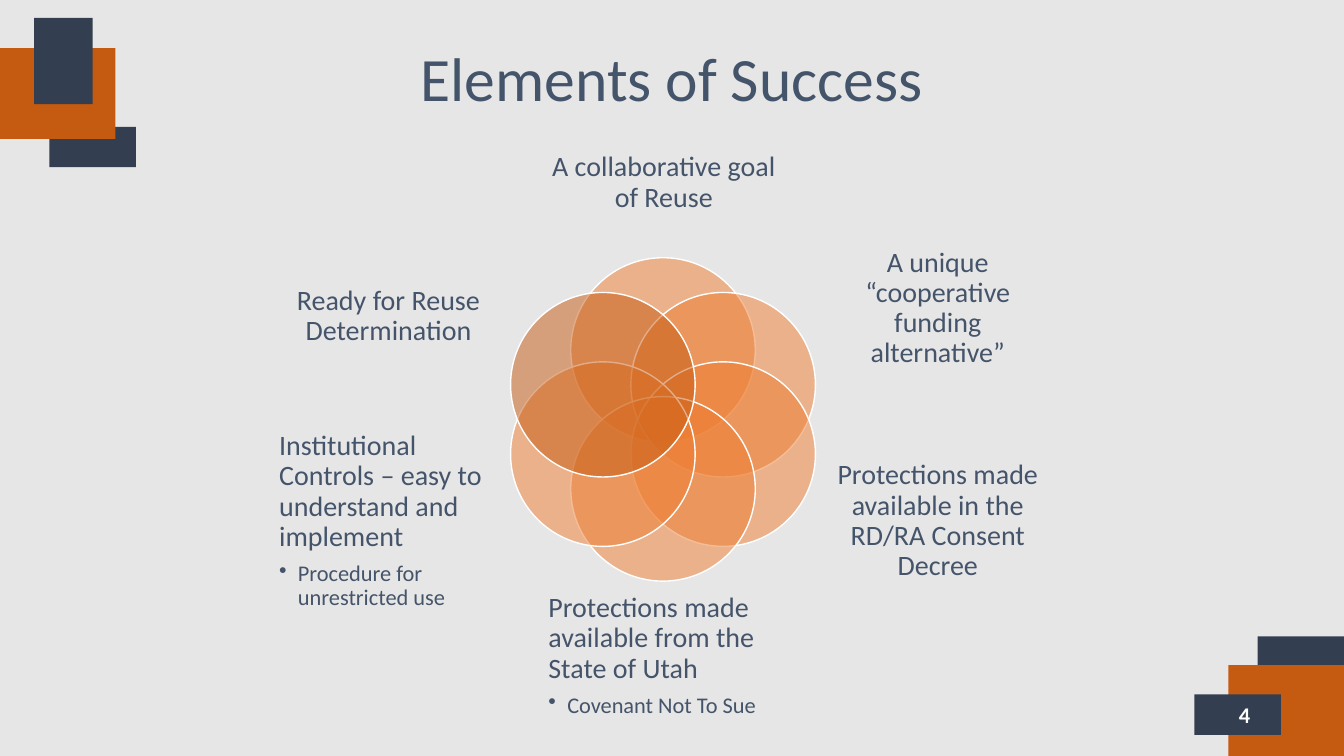
from math import cos, radians, sin

from lxml.etree import SubElement
from pptx import Presentation
from pptx.dml.color import RGBColor
from pptx.enum.shapes import MSO_SHAPE
from pptx.enum.text import MSO_ANCHOR, PP_ALIGN
from pptx.oxml.ns import qn
from pptx.util import Pt

BACKGROUND = RGBColor(0xE7, 0xE6, 0xE6)
NAVY = RGBColor(0x33, 0x3F, 0x50)
RUST = RGBColor(0xC5, 0x5A, 0x11)
ORANGE = RGBColor(0xED, 0x7D, 0x31)
SLATE = RGBColor(0x44, 0x54, 0x6A)
WHITE = RGBColor(0xFF, 0xFF, 0xFF)

CENTER_X, CENTER_Y = 473.6, 299.6
RING_RADIUS = 49.6
DIAMETER = 131.8

BLOCKS = [
    (35.3, 90.7, 61.9, 28.8, NAVY),
    (898.3, 454.5, 61.7, 41.8, NAVY),
    (877.5, 475.2, 82.5, 64.8, RUST),
    (853.2, 496.1, 61.7, 28.8, NAVY),
    (0, 34.4, 82.5, 64.8, RUST),
    (24.3, 12.7, 41.8, 61.7, NAVY),
]

ELEMENTS = [
    ("A collaborative goal of Reuse", None, (391.7, 85.7, 164.9, 90)),
    ("A unique “cooperative funding alternative”", None, (591.8, 171.4, 156.2, 97.9)),
    ("Protections made available in the RD/RA Consent Decree", None, (591.8, 317.5, 156.2, 109.4)),
    ("Protections made available from the State of Utah", "Covenant Not To Sue", (391.7, 423.4, 164.9, 90)),
    ("Institutional Controls – easy to understand and implement", "Procedure for unrestricted use", (199.4, 317.5, 156.2, 109.4)),
    ("Ready for Reuse Determination", None, (199.4, 171.4, 156.2, 109.4)),
]


class SlideBuilder:
    """Holds the text style and the current slide."""

    def __init__(self, slide, font="Calibri"):
        self.slide = slide
        self.font = font
        slide.background.fill.solid()
        slide.background.fill.fore_color.rgb = BACKGROUND

    def format_paragraph(self, paragraph, size, color, align, bold=False):
        paragraph.alignment = align
        for run in paragraph.runs:
            run.font.name = self.font
            run.font.size = Pt(size)
            run.font.bold = bold
            run.font.color.rgb = color

    def title(self, text, left, top, width, height):
        shape = self.slide.shapes.title
        shape.left, shape.top, shape.width, shape.height = Pt(left), Pt(top), Pt(width), Pt(height)
        shape.text_frame.text = text
        shape.text_frame.vertical_anchor = MSO_ANCHOR.MIDDLE
        paragraph = shape.text_frame.paragraphs[0]
        paragraph.line_spacing = 0.9
        self.format_paragraph(paragraph, 44, SLATE, PP_ALIGN.CENTER)

    def shape(self, kind, left, top, width, height, color):
        shape = self.slide.shapes.add_shape(kind, Pt(left), Pt(top), Pt(width), Pt(height))
        shape.shadow.inherit = False
        shape.fill.solid()
        shape.fill.fore_color.rgb = color
        shape.line.fill.background()
        return shape

    def circle(self, center_x, center_y, diameter, color):
        left, top = center_x - diameter / 2, center_y - diameter / 2
        shape = self.shape(MSO_SHAPE.OVAL, left, top, diameter, diameter, color)
        shape.line.color.rgb = WHITE
        shape.line.width = Pt(1)
        color_element = shape.fill._xPr.find(qn("a:solidFill"))[0]
        SubElement(color_element, qn("a:alpha"), val="50000")

    def text_box(self, left, top, width, height):
        box = self.slide.shapes.add_textbox(Pt(left), Pt(top), Pt(width), Pt(height))
        frame = box.text_frame
        frame.word_wrap = True
        frame.vertical_anchor = MSO_ANCHOR.MIDDLE
        return frame

    def label(self, text, detail, bounds):
        frame = self.text_box(*bounds)
        frame.margin_left = frame.margin_right = frame.margin_top = frame.margin_bottom = 0
        frame.text = text
        heading = frame.paragraphs[0]
        heading.line_spacing = 0.9
        heading.space_after = Pt(7)
        self.format_paragraph(heading, 20, SLATE, PP_ALIGN.LEFT if detail else PP_ALIGN.CENTER)
        if detail:
            self.bullet(frame.add_paragraph(), detail)

    def bullet(self, paragraph, text):
        paragraph.text = text
        paragraph.level = 1
        paragraph.line_spacing = 0.9
        paragraph.space_after = Pt(2.4)
        self.format_paragraph(paragraph, 16, SLATE, PP_ALIGN.LEFT)
        properties = paragraph._p.get_or_add_pPr()
        properties.set("marL", str(Pt(13.5)))
        properties.set("indent", str(-Pt(13.5)))
        SubElement(properties, qn("a:buChar"), char="•")

    def page_number(self, number, left, top, width, height):
        frame = self.text_box(left, top, width, height)
        frame.text = number
        self.format_paragraph(frame.paragraphs[0], 16, WHITE, PP_ALIGN.RIGHT, bold=True)


def main():
    presentation = Presentation()
    presentation.slide_width, presentation.slide_height = Pt(960), Pt(540)
    builder = SlideBuilder(presentation.slides.add_slide(presentation.slide_layouts[5]))

    for *bounds, color in BLOCKS:
        builder.shape(MSO_SHAPE.RECTANGLE, *bounds, color)
    builder.page_number("4", 684, 496.1, 216, 28.8)
    builder.title("Elements of Success", 0, 21.6, 960, 72.7)

    for index, (text, detail, bounds) in enumerate(ELEMENTS):
        angle = radians(index * 360 / len(ELEMENTS) - 90)
        color = RUST if index == len(ELEMENTS) - 1 else ORANGE
        builder.circle(CENTER_X + RING_RADIUS * cos(angle), CENTER_Y + RING_RADIUS * sin(angle), DIAMETER, color)
        builder.label(text, detail, bounds)

    presentation.save("out.pptx")


if __name__ == "__main__":
    main()
